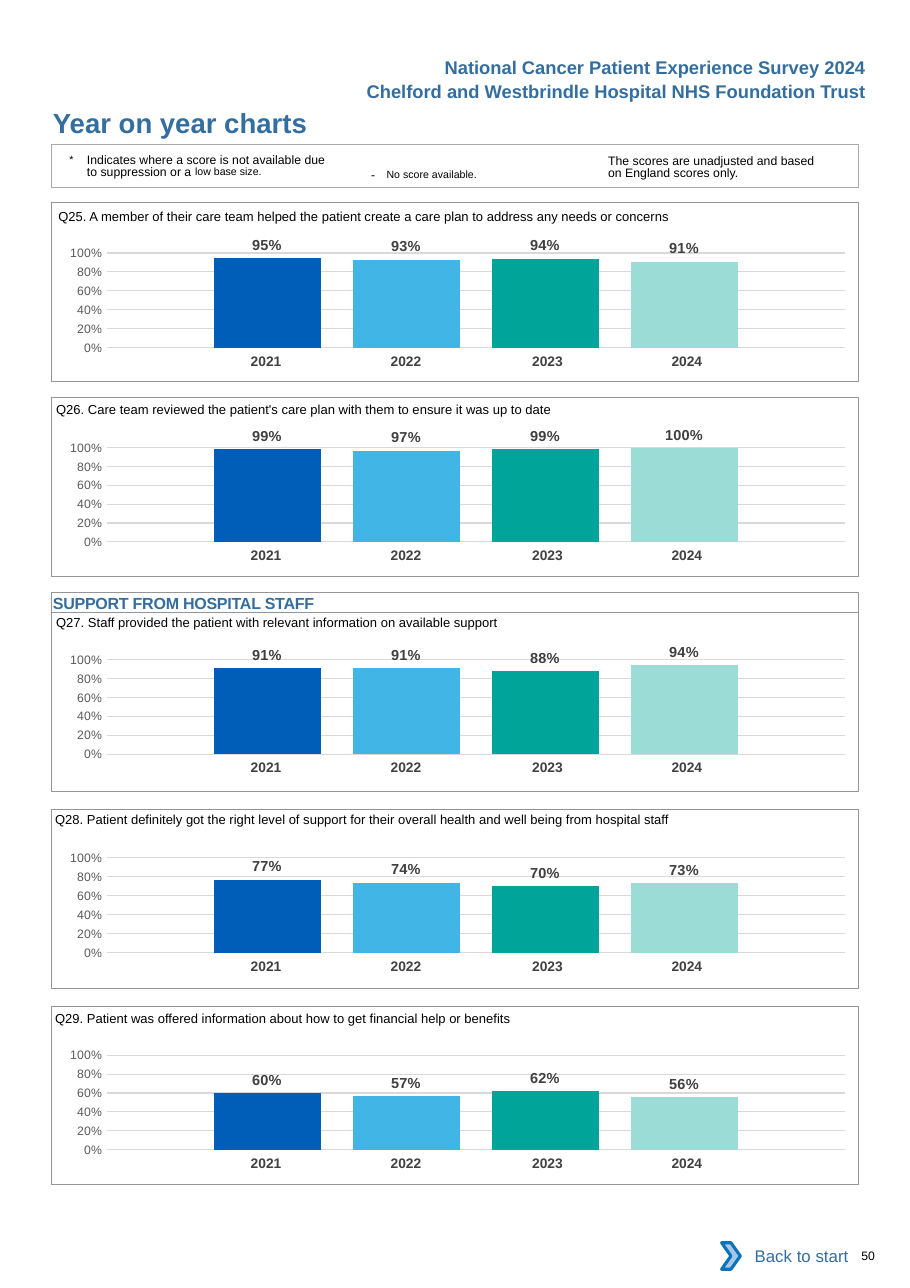
"""Build the year on year charts page of a patient experience survey report."""
from lxml.etree import fromstring
from pptx import Presentation
from pptx.chart.data import CategoryChartData
from pptx.dml.color import RGBColor
from pptx.enum.chart import XL_CHART_TYPE, XL_LABEL_POSITION, XL_TICK_MARK
from pptx.enum.shapes import MSO_SHAPE
from pptx.enum.text import MSO_ANCHOR, MSO_AUTO_SIZE, PP_ALIGN
from pptx.util import Inches, Pt

BLUE = "336E9F"
GRAY = "939598"
YEARS = ["2021", "2022", "2023", "2024"]
YEAR_WIDTHS = [1.27, 1.27, 1.34, 1.27]
YEAR_RIGHT_MARGINS = [0, 0, 0.04, 0.12]
BAR_COLORS = ["005EB8", "41B6E6", "00A499", "9CDCD7"]
PLOT_LAYOUT = (
    '<c:layout xmlns:c="http://schemas.openxmlformats.org/drawingml/2006/chart">'
    '<c:manualLayout><c:layoutTarget val="inner"/><c:xMode val="edge"/><c:yMode val="edge"/>'
    '<c:x val="0.079"/><c:y val="0.145"/><c:w val="0.915"/><c:h val="0.666"/>'
    '</c:manualLayout></c:layout>'
)


def color(target, value):
    """Give a font, fill or line a solid colour."""
    if hasattr(target, "solid"):
        target.solid()
        target.fore_color.rgb = RGBColor.from_string(value)
    else:
        target.color.rgb = RGBColor.from_string(value)


def write(frame, text, size=8, ink="000000", bold=False, align=PP_ALIGN.LEFT,
          margins=(0, 0, 0, 0), baseline=0, spacing=0):
    """Add a formatted run to the first paragraph of a text frame."""
    frame.word_wrap = True
    frame.margin_left, frame.margin_top, frame.margin_right, frame.margin_bottom = map(Inches, margins)
    paragraph = frame.paragraphs[0]
    paragraph.alignment = align
    run = paragraph.add_run()
    run.text = text
    run.font.name = "Arial"
    run.font.size = Pt(size)
    run.font.bold = bold
    color(run.font, ink)
    if baseline:
        run.font._element.set("baseline", str(baseline * 1000))
    if spacing:
        run.font._element.set("spc", str(round(spacing * 100)))
    return paragraph


presentation = Presentation()
presentation.slide_width = Inches(8.26)
presentation.slide_height = Inches(11.69)
slide = presentation.slides.add_slide(presentation.slide_layouts[5])
shapes = slide.shapes

title = shapes.title
title.left, title.top, title.width, title.height = map(Inches, (0.47, 0.96, 4.5, 0.3))
title.text_frame.auto_size = MSO_AUTO_SIZE.NONE
title.text_frame.vertical_anchor = MSO_ANCHOR.TOP
write(title.text_frame, "Year on year charts", size=18, ink=BLUE, bold=True, margins=(0.01, 0, 0, 0))

headings = [
    (0.46, "National Cancer Patient Experience Survey 2024"),
    (0.68, "Chelford and Westbrindle Hospital NHS Foundation Trust"),
]
for top, text in headings:
    heading = shapes.add_textbox(Inches(2.96), Inches(top), Inches(5), Inches(0.3))
    write(heading.text_frame, text, size=12, ink=BLUE, bold=True,
          align=PP_ALIGN.RIGHT, margins=(0.1, 0.05, 0.1, 0.05))

questions = [
    (1.84, 2.11, 0.53, 1.8, "Q25. A member of their care team helped the patient create a care plan to address any needs or concerns",
     [0.95, 0.93, 0.94, 0.91]),
    (3.61, 3.87, 0.51, 3.55, "Q26. Care team reviewed the patient's care plan with them to ensure it was up to date",
     [0.99, 0.97, 0.99, 1]),
    (5.56, 5.8, 0.51, 5.49, "Q27. Staff provided the patient with relevant information on available support",
     [0.91, 0.91, 0.88, 0.94]),
    (7.35, 7.6, 0.5, 7.28, "Q28. Patient definitely got the right level of support for their overall health and well being from hospital staff",
     [0.77, 0.74, 0.7, 0.73]),
    (9.13, 9.39, 0.5, 9.08, "Q29. Patient was offered information about how to get financial help or benefits",
     [0.6, 0.57, 0.62, 0.56]),
]
for frame_top, chart_top, question_left, question_top, question, scores in questions:
    year_table = shapes.add_table(1, 4, Inches(1.73), Inches(chart_top + 1.05), Inches(5.15), Inches(0.27)).table
    year_table.first_row = False
    year_table.horz_banding = False
    year_table.rows[0].height = Inches(0.27)
    for column, (year, width, right) in enumerate(zip(YEARS, YEAR_WIDTHS, YEAR_RIGHT_MARGINS)):
        year_table.columns[column].width = Inches(width)
        cell = year_table.cell(0, column)
        cell.fill.background()
        write(cell.text_frame, year, size=9, ink="414042", bold=True, align=PP_ALIGN.CENTER)
        cell.margin_left = Inches(0.1)
        cell.margin_right = Inches(right)
        cell.margin_top = cell.margin_bottom = Inches(0.05)

    chart_data = CategoryChartData(number_format="0%")
    chart_data.categories = ["1"]
    for number, score in enumerate(scores, 1):
        chart_data.add_series(f"Series {number}", [score])
    chart = shapes.add_chart(XL_CHART_TYPE.COLUMN_CLUSTERED, Inches(0.39), Inches(chart_top),
                             Inches(7.32), Inches(1.29), chart_data).chart
    chart.has_title = False
    chart.has_legend = False
    chart.font.name = "Calibri"
    chart.font.size = Pt(10)
    color(chart.font, "000000")
    plot_area = chart._chartSpace.chart.plotArea
    for layout in plot_area.findall("{*}layout"):
        plot_area.remove(layout)
    plot_area.insert(0, fromstring(PLOT_LAYOUT))

    chart.category_axis.visible = False
    score_axis = chart.value_axis
    score_axis.minimum_scale = 0
    score_axis.maximum_scale = 1
    score_axis.major_unit = 0.2
    score_axis.major_tick_mark = XL_TICK_MARK.NONE
    score_axis.minor_tick_mark = XL_TICK_MARK.NONE
    score_axis.format.line.fill.background()
    score_axis.major_gridlines.format.line.width = Pt(0.75)
    color(score_axis.major_gridlines.format.line.fill, "D9D9D9")
    score_axis.tick_labels.number_format = "0%"
    score_axis.tick_labels.number_format_is_linked = False
    score_axis.tick_labels.font.name = "Arial"
    score_axis.tick_labels.font.size = Pt(8)
    color(score_axis.tick_labels.font, "595959")

    plot = chart.plots[0]
    plot.gap_width = 200
    plot.overlap = -30
    plot.vary_by_categories = False
    for series, bar_color in zip(plot.series, BAR_COLORS):
        series.invert_if_negative = False
        color(series.format.fill, bar_color)
        labels = series.data_labels
        labels.show_value = True
        labels.position = XL_LABEL_POSITION.OUTSIDE_END
        labels.number_format = "0%"
        labels.number_format_is_linked = False
        labels.font.name = "Arial"
        labels.font.size = Pt(9.5)
        labels.font.bold = True
        color(labels.font, "404040")

    question_box = shapes.add_textbox(Inches(question_left), Inches(question_top), Inches(7.2), Inches(0.24))
    write(question_box.text_frame, question, size=8.5, margins=(0, 0.09, 0, 0))

frames = [(question[0], 1.62, GRAY, 0.5) for question in questions]
frames += [(5.38, 0.18, GRAY, 0.5), (1.31, 0.39, "A9AAAD", 0.75)]
for top, height, line_color, line_width in frames:
    frame = shapes.add_shape(MSO_SHAPE.RECTANGLE, Inches(0.47), Inches(top), Inches(7.32), Inches(height))
    frame.shadow.inherit = False
    frame.fill.background()
    frame.line.width = Pt(line_width)
    color(frame.line.fill, line_color)
    if top == 5.38:
        frame.text_frame.vertical_anchor = MSO_ANCHOR.TOP
        write(frame.text_frame, "SUPPORT FROM HOSPITAL STAFF", size=10.5, ink=BLUE, bold=True,
              margins=(0.01, 0.01, 0, 0), spacing=-0.15)

suppression_note = shapes.add_textbox(Inches(0.63), Inches(1.38), Inches(2.4), Inches(0.27)).text_frame
note_margins = (0, 0.03, 0, 0)
write(suppression_note, "*\t", size=12, baseline=3, margins=note_margins)
write(suppression_note, "Indicates where a score is not available due to suppression or a ", margins=note_margins)
paragraph = write(suppression_note, "low base size.", size=12, baseline=7, margins=note_margins)
paragraph.line_spacing = Pt(8.1)
paragraph._p.get_or_add_pPr().set("marL", str(Inches(0.16)))
paragraph._p.get_or_add_pPr().set("indent", str(-Inches(0.16)))

missing_note = shapes.add_textbox(Inches(3.27), Inches(1.41), Inches(1.83), Inches(0.24)).text_frame
missing_margins = (0.1, 0.05, 0.1, 0.05)
write(missing_note, "- ", spacing=2.6, margins=missing_margins)
write(missing_note, "No score available.", size=12, baseline=3, margins=missing_margins)

basis_note = shapes.add_textbox(Inches(5.52), Inches(1.38), Inches(2.01), Inches(0.27)).text_frame
paragraph = write(basis_note, "The scores are unadjusted and based on England scores only.", margins=note_margins)
paragraph.line_spacing = Pt(8.1)

back_box = shapes.add_textbox(Inches(6.62), Inches(11.19), Inches(1.18), Inches(0.42))
back_box.text_frame.vertical_anchor = MSO_ANCHOR.MIDDLE
write(back_box.text_frame, "Back to start", size=11, ink=BLUE, align=PP_ALIGN.RIGHT,
      margins=(0.1, 0.05, 0.1, 0.05))
chevron = shapes.add_shape(MSO_SHAPE.CHEVRON, Inches(6.55), Inches(11.28), Inches(0.17), Inches(0.24))
chevron.shadow.inherit = False
chevron.line.width = Pt(2)
color(chevron.fill, "A8C7E9")
color(chevron.line.fill, "0A74BB")

page_number = shapes.add_textbox(Inches(7.72), Inches(11.33), Inches(0.51), Inches(0.13))
write(page_number.text_frame, "50", margins=(0.1, 0, 0, 0))

presentation.save("out.pptx")
